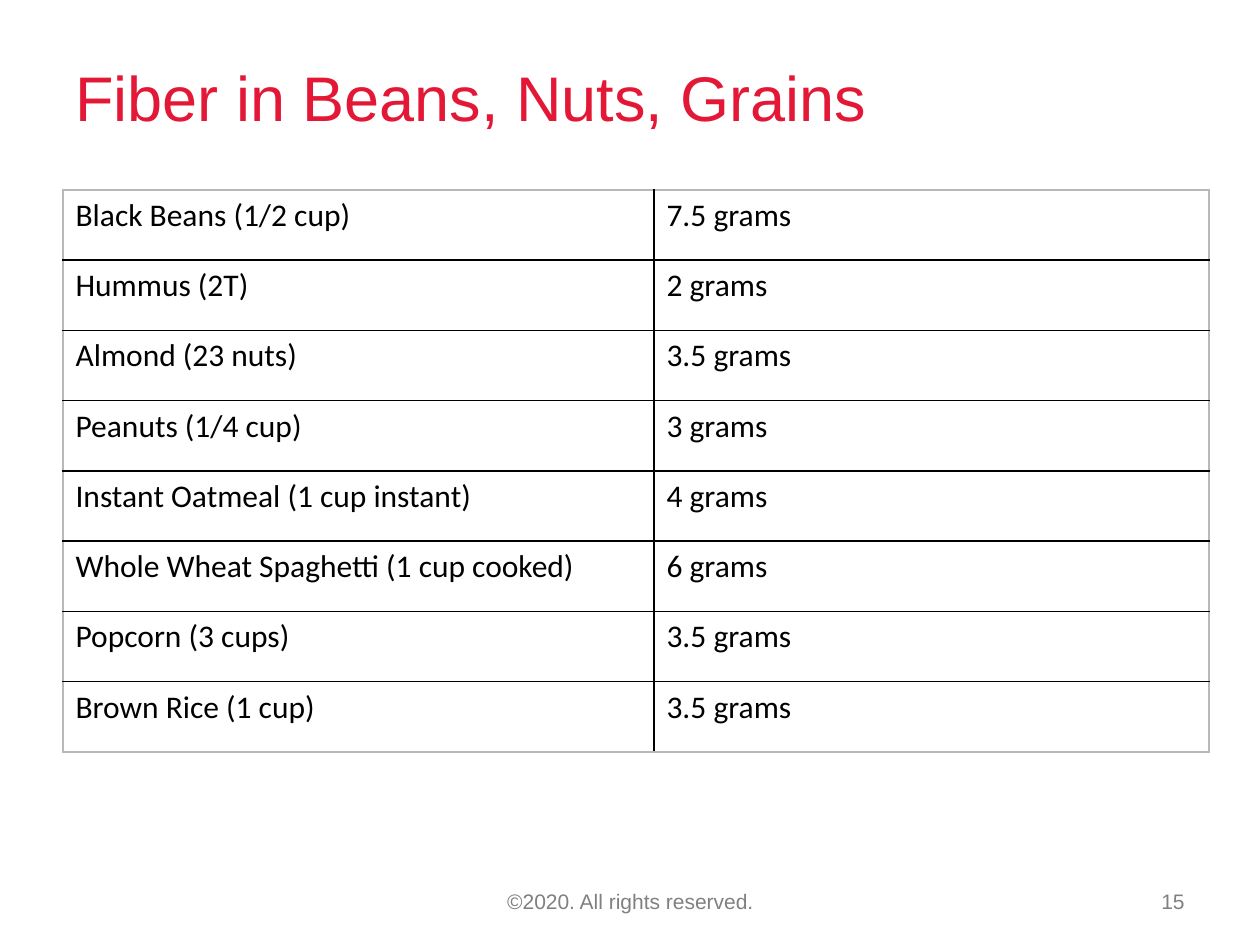
import pptx
import pptx.dml.color
import pptx.enum.text
import pptx.oxml
import pptx.oxml.ns
import pptx.util

PX = 914400 // 126
COLORS = {"title": "E31837", "footer": "808080", "text": "000000",
          "cell": "FFFFFF", "inner": "000000", "outer": "B8B8B8"}
ALIGN = pptx.enum.text.PP_ALIGN
ANCHOR = pptx.enum.text.MSO_ANCHOR


def add_span(para, text, size, font, color):
    span = para.add_run()
    span.text = text
    span.font.size = pptx.util.Pt(size)
    span.font.name = font
    span.font.color.rgb = pptx.dml.color.RGBColor.from_string(COLORS[color])


def add_border(cell, side, color):
    cell._tc.get_or_add_tcPr().append(pptx.oxml.parse_xml(
        f'<a:{side} {pptx.oxml.ns.nsdecls("a")} w="12700"><a:solidFill>'
        f'<a:srgbClr val="{COLORS[color]}"/></a:solidFill></a:{side}>'))


deck = pptx.Presentation()
deck.slide_width = pptx.util.Inches(10)
deck.slide_height = pptx.util.Inches(7.5)
page = deck.slides.add_slide(deck.slide_layouts[6])

# Title, copyright line and page number
labels = [
    ("Fiber in Beans, Nuts, Grains", (63, 38, 1043, 116), 36, "title", ALIGN.LEFT),
    ("©2020. All rights reserved.", (431, 876, 399, 50), 12, "footer", ALIGN.CENTER),
    ("15", (903, 876, 294, 50), 12, "footer", ALIGN.RIGHT),
]
for text, place, size, color, align in labels:
    box = page.shapes.add_textbox(*(length * PX for length in place))
    box.text_frame.word_wrap = True
    box.text_frame.vertical_anchor = ANCHOR.MIDDLE
    para = box.text_frame.paragraphs[0]
    para.alignment = align
    add_span(para, text, size, "Arial", color)

# Fiber table
foods = [
    ("Black Beans (1/2 cup)", "7.5 grams"),
    ("Hummus (2T)", "2 grams"),
    ("Almond (23 nuts)", "3.5 grams"),
    ("Peanuts (1/4 cup)", "3 grams"),
    ("Instant Oatmeal (1 cup instant)", "4 grams"),
    ("Whole Wheat Spaghetti (1 cup cooked)", "6 grams"),
    ("Popcorn (3 cups)", "3.5 grams"),
    ("Brown Rice (1 cup)", "3.5 grams"),
]
widths = [591, 555]
last_row, last_column = len(foods) - 1, len(widths) - 1
table = page.shapes.add_table(len(foods), len(widths), 63 * PX, 190 * PX,
                              sum(widths) * PX, 562 * PX).table
table.first_row = False
table.horz_banding = False
for column, width in zip(table.columns, widths):
    column.width = width * PX

for row, food in enumerate(foods):
    for column, text in enumerate(food):
        cell = table.cell(row, column)
        add_span(cell.text_frame.paragraphs[0], text, 18, "Calibri", "text")
        # Grey outer frame, black inner grid
        edges = {"lnL": column == 0, "lnR": column == last_column,
                 "lnT": row == 0, "lnB": row == last_row}
        for side, is_outer in edges.items():
            add_border(cell, side, "outer" if is_outer else "inner")
        cell.fill.solid()
        cell.fill.fore_color.rgb = pptx.dml.color.RGBColor.from_string(COLORS["cell"])

deck.save("out.pptx")
